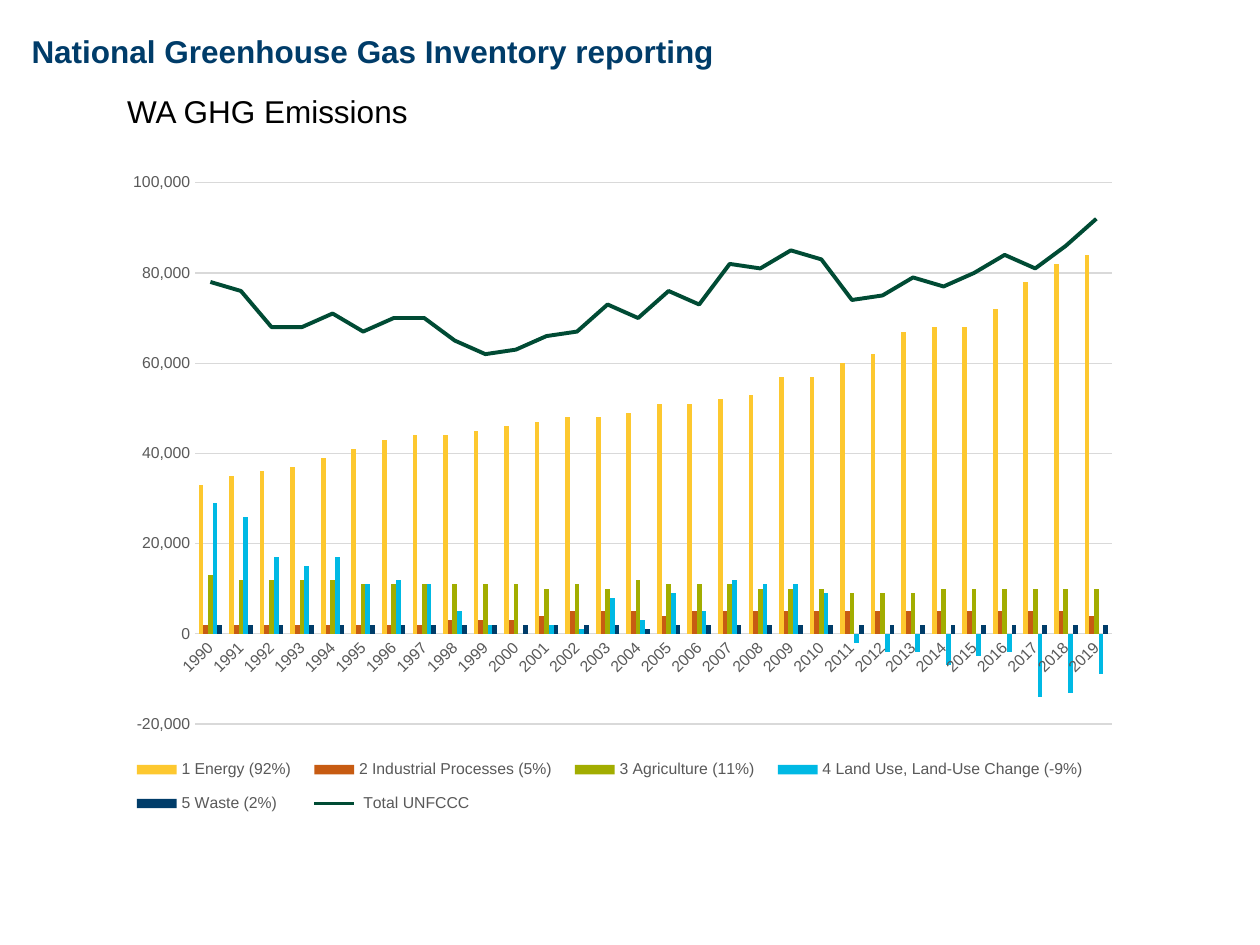
import pptx
import pptx.chart.data
import pptx.dml.color
import pptx.enum.chart
import pptx.enum.text
import pptx.oxml
import pptx.oxml.ns
import pptx.util
from pptx.util import Inches

RGBColor = pptx.dml.color.RGBColor
BLACK = RGBColor(0x00, 0x00, 0x00)
NAVY = RGBColor(0x00, 0x3C, 0x69)
GREY = RGBColor(0x59, 0x59, 0x59)
LIGHT_GREY = RGBColor(0xD9, 0xD9, 0xD9)
YELLOW = RGBColor(0xFD, 0xC8, 0x2F)
ORANGE = RGBColor(0xC7, 0x5B, 0x12)
OLIVE = RGBColor(0xA2, 0xAD, 0x00)
CYAN = RGBColor(0x00, 0xB9, 0xE4)
GREEN = RGBColor(0x00, 0x4B, 0x34)
FONT = "Arial"

YEARS = [str(year) for year in range(1990, 2020)]
SECTORS_IN_THOUSANDS = [
    ("1 Energy (92%)", YELLOW,
     [33, 35, 36, 37, 39, 41, 43, 44, 44, 45, 46, 47, 48, 48, 49,
      51, 51, 52, 53, 57, 57, 60, 62, 67, 68, 68, 72, 78, 82, 84]),
    ("2 Industrial Processes (5%)", ORANGE,
     [2] * 8 + [3] * 3 + [4] + [5] * 3 + [4] + [5] * 13 + [4]),
    ("3 Agriculture (11%)", OLIVE,
     [13, 12, 12, 12, 12, 11, 11, 11, 11, 11, 11, 10, 11, 10, 12,
      11, 11, 11, 10, 10, 10, 9, 9, 9, 10, 10, 10, 10, 10, 10]),
    ("4 Land Use, Land-Use Change (-9%)", CYAN,
     [29, 26, 17, 15, 17, 11, 12, 11, 5, 2, 0, 2, 1, 8, 3,
      9, 5, 12, 11, 11, 9, -2, -4, -4, -7, -5, -4, -14, -13, -9]),
    ("5 Waste (2%)", NAVY, [2] * 14 + [1] + [2] * 15),
    (" Total UNFCCC", GREEN,
     [78, 76, 68, 68, 71, 67, 70, 70, 65, 62, 63, 66, 67, 73, 70,
      76, 73, 82, 81, 85, 83, 74, 75, 79, 77, 80, 84, 81, 86, 92]),
]


def style_font(font, size, color, bold=False):
    """Apply the slide's typeface with the given size and colour."""
    font.name = FONT
    font.size = pptx.util.Pt(size)
    font.color.rgb = color
    font.bold = bold


def fill_heading(shape, box, text, color, bold=False):
    """Place a one-line heading in its box."""
    shape.left, shape.top, shape.width, shape.height = box
    frame = shape.text_frame
    frame.text = text
    frame.word_wrap = False
    frame.auto_size = pptx.enum.text.MSO_AUTO_SIZE.SHAPE_TO_FIT_TEXT
    frame.vertical_anchor = pptx.enum.text.MSO_ANCHOR.TOP
    paragraph = frame.paragraphs[0]
    paragraph.alignment = pptx.enum.text.PP_ALIGN.LEFT
    style_font(paragraph.font, 18, color, bold)


def manual_layout(x, y, width, height, inner=False):
    """Return a chart layout element in fractions of the chart area."""
    target = '<c:layoutTarget val="inner"/>' if inner else ""
    return pptx.oxml.parse_xml(
        f'<c:layout {pptx.oxml.ns.nsdecls("c")}><c:manualLayout>{target}'
        '<c:xMode val="edge"/><c:yMode val="edge"/>'
        f'<c:x val="{x}"/><c:y val="{y}"/><c:w val="{width}"/><c:h val="{height}"/>'
        '</c:manualLayout></c:layout>')


def move_last_series_to_line(chart):
    """Turn the last column series into a line on the same axes."""
    qn = pptx.oxml.ns.qn
    bar_chart = chart.plots[0]._element
    series = bar_chart.findall(qn("c:ser"))[-1]
    for setting in series.findall(qn("c:invertIfNegative")):
        series.remove(setting)
    axes = "".join(f'<c:axId val="{axis.get("val")}"/>'
                   for axis in bar_chart.findall(qn("c:axId")))
    line_chart = pptx.oxml.parse_xml(
        f'<c:lineChart {pptx.oxml.ns.nsdecls("c")}><c:grouping val="standard"/>'
        f'<c:varyColors val="0"/><c:marker val="1"/>{axes}</c:lineChart>')
    line_chart.insert(2, series)
    bar_chart.addnext(line_chart)


def style_axes(chart):
    """Format both axes and the gridlines."""
    category_axis, value_axis = chart.category_axis, chart.value_axis
    for axis in (category_axis, value_axis):
        axis.major_tick_mark = pptx.enum.chart.XL_TICK_MARK.NONE
        axis.minor_tick_mark = pptx.enum.chart.XL_TICK_MARK.NONE
        style_font(axis.tick_labels.font, 9, GREY)
    value_axis.minimum_scale = -20000
    value_axis.maximum_scale = 100000
    value_axis.major_unit = 20000
    value_axis.tick_labels.number_format = "#,##0"
    value_axis.tick_labels.number_format_is_linked = False
    value_axis.format.line.fill.background()
    value_axis.has_major_gridlines = True
    for line in (category_axis.format.line, value_axis.major_gridlines.format.line):
        line.color.rgb = LIGHT_GREY
        line.width = pptx.util.Pt(0.75)
    label_body = category_axis._element.find(".//" + pptx.oxml.ns.qn("a:bodyPr"))
    label_body.set("rot", "-2700000")
    label_body.set("vert", "horz")


def style_series(chart):
    """Colour the columns and the total line."""
    columns, total = chart.plots
    columns.gap_width = 150
    columns.overlap = 0
    columns.vary_by_categories = False
    for series, (_, color, _) in zip(columns.series, SECTORS_IN_THOUSANDS):
        series.format.fill.solid()
        series.format.fill.fore_color.rgb = color
        series.invert_if_negative = False
    line = total.series[0]
    line.format.line.color.rgb = GREEN
    line.format.line.width = pptx.util.Pt(2.25)
    line.marker.style = pptx.enum.chart.XL_MARKER_STYLE.NONE
    line.smooth = False


def add_emissions_chart(slide, box):
    """Add the sector columns with the total line in the box."""
    data = pptx.chart.data.CategoryChartData(number_format="#,##0")
    data.categories = YEARS
    for name, _, thousands in SECTORS_IN_THOUSANDS:
        data.add_series(name, [value * 1000 for value in thousands])
    chart = slide.shapes.add_chart(
        pptx.enum.chart.XL_CHART_TYPE.COLUMN_CLUSTERED, *box, data).chart
    chart.has_title = False
    style_font(chart.font, 10, BLACK)
    move_last_series_to_line(chart)
    style_axes(chart)
    style_series(chart)
    chart.has_legend = True
    legend = chart.legend
    legend.position = pptx.enum.chart.XL_LEGEND_POSITION.BOTTOM
    legend.include_in_layout = False
    style_font(legend.font, 9, GREY)

    qn = pptx.oxml.ns.qn
    plot_area = chart.plots[0]._element.getparent()
    for parent, layout, index in (
            (plot_area, manual_layout(0.12, 0.04, 0.84, 0.78, True), 0),
            (legend._element, manual_layout(0.05, 0.85, 0.9, 0.12), 1)):
        for existing in parent.findall(qn("c:layout")):
            parent.remove(existing)
        parent.insert(index, layout)


def build_slide(presentation):
    """Build the emissions reporting slide."""
    slide = presentation.slides.add_slide(presentation.slide_layouts[5])
    add_emissions_chart(
        slide, (Inches(0.51), Inches(1.23), Inches(8.66), Inches(5.51)))
    chart_box = (Inches(0.91), Inches(0.68), Inches(2.45), Inches(0.4))
    fill_heading(slide.shapes.add_textbox(*chart_box), chart_box,
                 "WA GHG Emissions", BLACK)
    title_box = (Inches(0.15), Inches(0.2), Inches(5.74), Inches(0.4))
    fill_heading(slide.shapes.title, title_box,
                 "National Greenhouse Gas Inventory reporting", NAVY, bold=True)


def main():
    """Create and save the presentation."""
    presentation = pptx.Presentation()
    presentation.slide_width = Inches(10)
    presentation.slide_height = Inches(7.5)
    build_slide(presentation)
    presentation.save("out.pptx")


if __name__ == "__main__":
    main()
